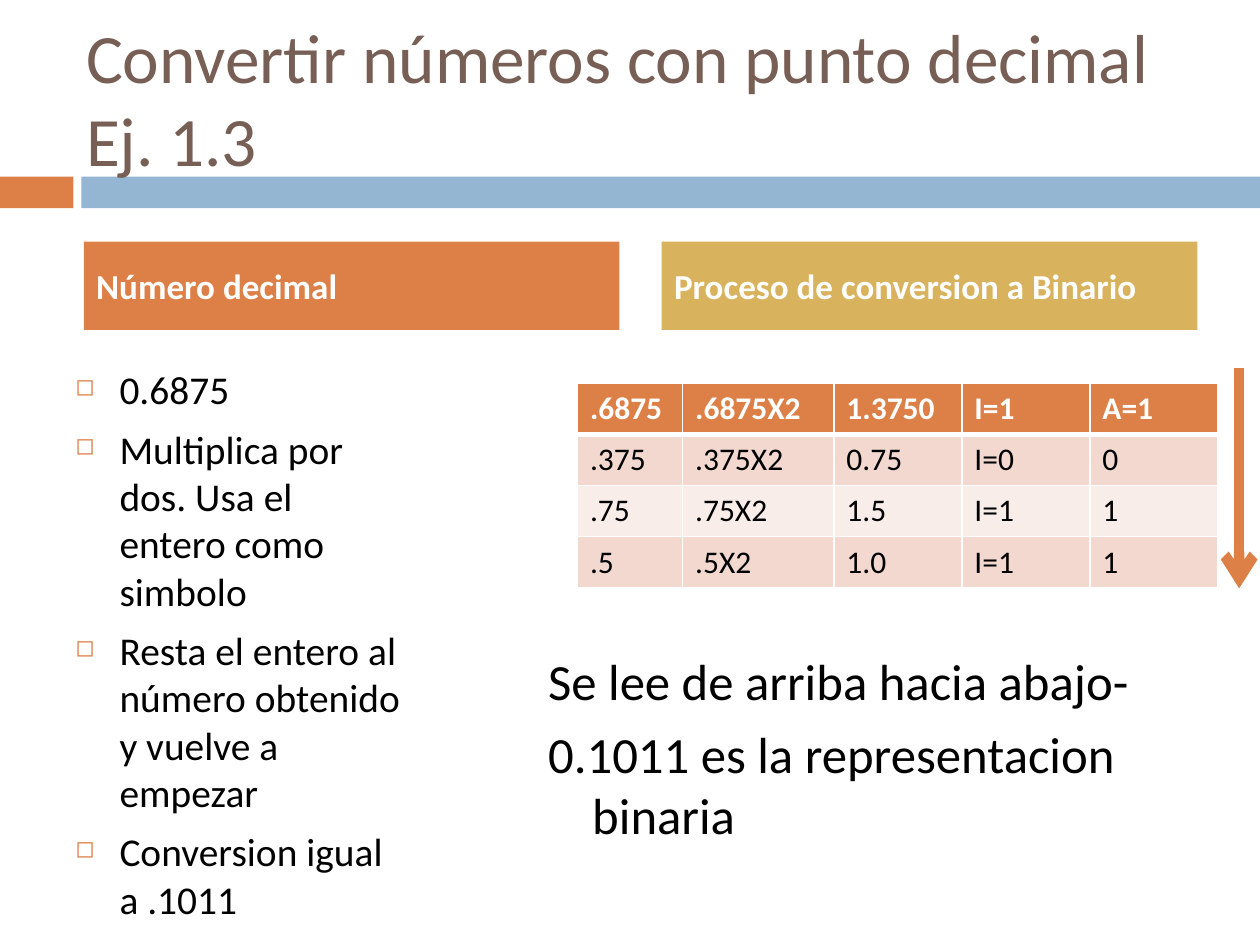
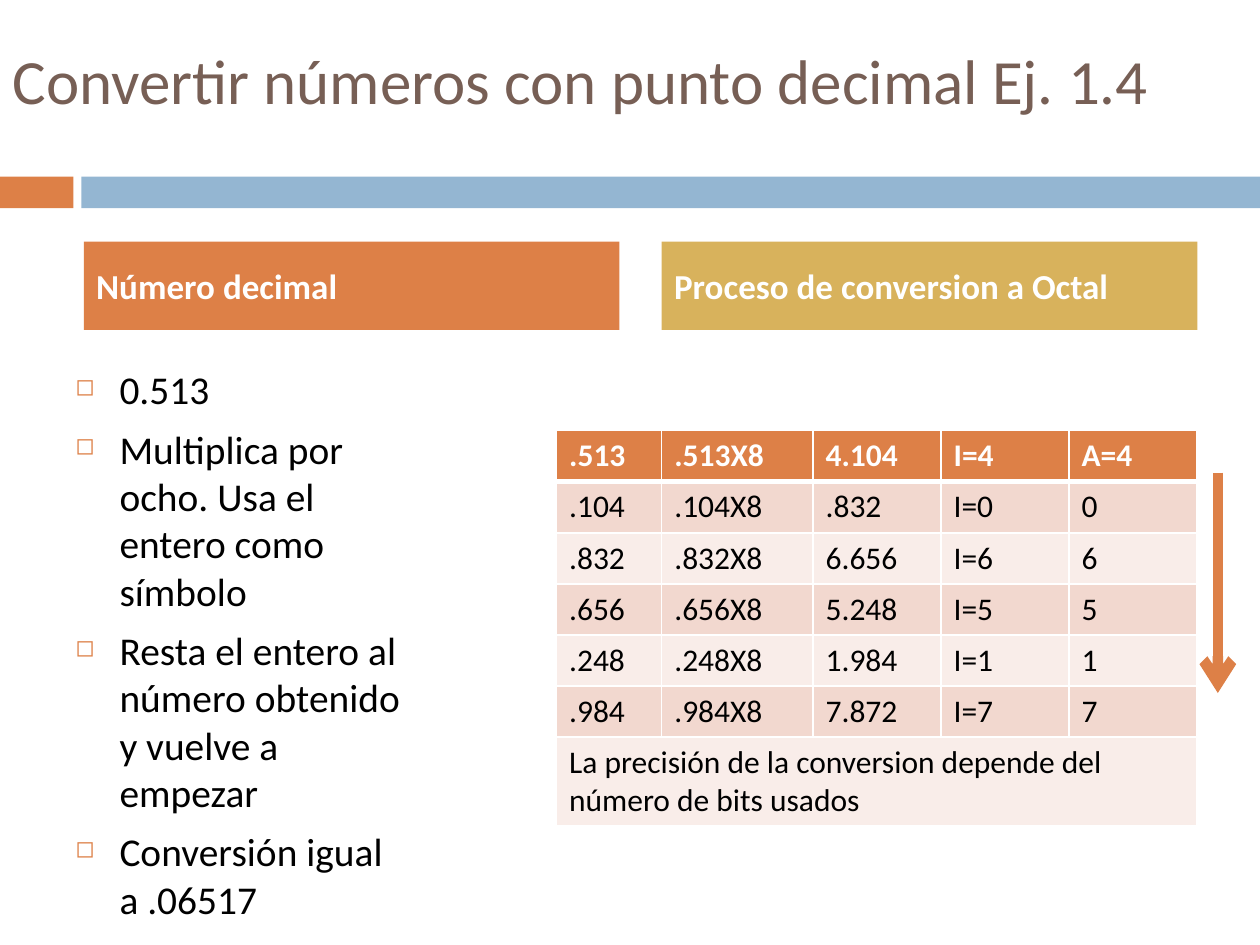
from pptx import Presentation
from pptx import util as u
from pptx.dml import color
from pptx.enum import shapes, text
from pptx.oxml import ns
from lxml import etree

# Shared style
FONT = "Calibri"
ORANGE, BLUE, GOLD, BROWN = "DD8047", "94B6D2", "D8B25C", "775F55"
BLACK, WHITE = "000000", "FFFFFF"
ROW_TINTS = ("F9EDE9", "F2D8CF")
COLUMNS = (2.12, 3.05, 2.58, 2.58, 2.58)
ROW_H = 1.03
HANG = 0.89


def rgb(value):
    return color.RGBColor.from_string(value)


def sub(parent, tag, **attrs):
    """Append a DrawingML child element."""
    return etree.SubElement(parent, ns.qn(f"a:{tag}"), **attrs)


def write(p, content, size=18, colour=BLACK, bold=False, before=0, hang=0, bullet=None):
    p.alignment = text.PP_ALIGN.LEFT
    p.space_before = u.Pt(before)
    pPr = p._p.get_or_add_pPr()
    if hang:
        pPr.set("marL", str(u.Cm(hang)))
        pPr.set("indent", str(-u.Cm(hang)))
    if bullet:
        sub(sub(pPr, "buClr"), "srgbClr", val=ORANGE)
        sub(pPr, "buSzPct", val="60000")
        sub(pPr, "buChar", char=bullet)
    r = p.add_run()
    r.text = content
    r.font.name, r.font.size, r.font.bold = FONT, u.Pt(size), bold
    r.font.color.rgb = rgb(colour)


class Deck:
    def __init__(self):
        self.prs = Presentation()
        self.prs.slide_width, self.prs.slide_height = u.Cm(25.4), u.Cm(19.05)
        self.layout = self.prs.slide_layouts[5]
        self.s = None

    def slide(self, title, box, size):
        first = self.s is None
        self.s = self.prs.slides.add_slide(self.layout)
        if first:
            self.bands()
        sp = self.s.shapes.title
        sp.left, sp.top, sp.width, sp.height = map(u.Cm, box)
        tf = sp.text_frame
        tf.auto_size = text.MSO_AUTO_SIZE.NONE
        tf.vertical_anchor = text.MSO_ANCHOR.MIDDLE
        write(tf.paragraphs[0], title, size=size, colour=BROWN)

    def bands(self):
        """Draw the two bands and hand them to the layout, behind every slide."""
        for i, (left, width, fill) in enumerate([(0, 1.48, ORANGE), (1.64, 23.76, BLUE)]):
            band = self.rect((left, 3.56, width, 0.64), fill).element
            band.nvSpPr.cNvPr.set("id", str(101 + i))
            self.layout.shapes.element.insert(2 + i, band)

    def rect(self, box, fill):
        sp = self.s.shapes.add_shape(shapes.MSO_SHAPE.RECTANGLE, *map(u.Cm, box))
        sp.shadow.inherit = False
        sp.fill.solid()
        sp.fill.fore_color.rgb = rgb(fill)
        sp.line.fill.background()
        return sp

    def heading(self, content, left, fill):
        tf = self.rect((left, 4.87, 10.8, 1.78), fill).text_frame
        tf.word_wrap = True
        tf.vertical_anchor = text.MSO_ANCHOR.MIDDLE
        write(tf.paragraphs[0], content, size=20, colour=WHITE, bold=True, before=7)

    def paragraphs(self, lines, box, **fmt):
        tf = self.s.shapes.add_textbox(*map(u.Cm, box)).text_frame
        tf.word_wrap = True
        for i, line in enumerate(lines):
            p = tf.add_paragraph() if i else tf.paragraphs[0]
            write(p, line, before=7, hang=HANG, **fmt)

    def table(self, rows, left, top, note=None):
        count = len(rows) + bool(note)
        frame = self.s.shapes.add_table(count, len(COLUMNS), u.Cm(left), u.Cm(top),
                                        u.Cm(sum(COLUMNS)), u.Cm(ROW_H * count))
        tbl = frame.table
        tbl.first_row = tbl.horz_banding = False
        for column, width in zip(tbl.columns, COLUMNS):
            column.width = u.Cm(width)
        for row in tbl.rows:
            row.height = u.Cm(ROW_H)
        for i in range(count):
            for j in range(len(COLUMNS)):
                self.cell(tbl.cell(i, j), i)
        for i, values in enumerate(rows):
            for j, value in enumerate(values):
                write(tbl.cell(i, j).text_frame.paragraphs[0], value,
                      colour=BLACK if i else WHITE, bold=i == 0)
        if note:
            tbl.rows[count - 1].height = u.Cm(1.78)
            start = tbl.cell(count - 1, 0)
            start.merge(tbl.cell(count - 1, len(COLUMNS) - 1))
            write(start.text_frame.paragraphs[0], note)

    def cell(self, cell, row):
        """White borders, thicker under the header, and the row's tint."""
        tcPr = cell._tc.get_or_add_tcPr()
        for side in "LRTB":
            thick = (side, row) in (("B", 0), ("T", 1))
            ln = sub(tcPr, f"ln{side}", w=str(u.Pt(3 if thick else 1)))
            sub(sub(ln, "solidFill"), "srgbClr", val=WHITE)
        cell.fill.solid()
        cell.fill.fore_color.rgb = rgb(ROW_TINTS[row % 2] if row else ORANGE)

    def arrow_down(self, x, top, bottom):
        sp = self.s.shapes.add_connector(shapes.MSO_CONNECTOR.STRAIGHT,
                                         u.Cm(x), u.Cm(top), u.Cm(x), u.Cm(bottom))
        sp.line.width = u.Pt(6)
        sp.line.color.rgb = rgb(ORANGE)
        sub(sp.line._get_or_add_ln(), "tailEnd", type="arrow")
        sub(sp.element.spPr, "effectLst")

    def conversion(self, base, steps):
        """Headings and the bulleted steps of one conversion."""
        self.heading("Número decimal", 1.69, ORANGE)
        self.heading(f"Proceso de conversion a {base}", 13.34, GOLD)
        self.paragraphs(steps, (1.27, 7.24, 7.2, 10.97), size=22.5, bullet="◻")


def main():
    deck = Deck()
    subtract = "Resta el entero al número obtenido y vuelve a empezar"

    # Decimal to binary
    deck.slide("Convertir números con punto decimal Ej. 1.3", (1.48, 0.76, 22.65, 2.41), 39.6)
    deck.conversion("Binario", ["0.6875", "Multiplica por dos. Usa el entero como simbolo",
                                subtract, "Conversion igual a .1011"])
    deck.paragraphs(["Se lee de arriba hacia abajo-", "0.1011 es la representacion binaria"],
                    (10.8, 12.98, 13.34, 5), size=29)
    deck.table([
        (".6875", ".6875X2", "1.3750", "I=1", "A=1"),
        (".375", ".375X2", "0.75", "I=0", "0"),
        (".75", ".75X2", "1.5", "I=1", "1"),
        (".5", ".5X2", "1.0", "I=1", "1"),
    ], 11.64, 7.73)
    deck.arrow_down(24.98, 7.41, 11.86)

    # Decimal to octal
    deck.slide("Convertir números con punto decimal Ej. 1.4", (0, 0, 24.98, 3.18), 36)
    deck.conversion("Octal", ["0.513", "Multiplica por ocho. Usa el entero como símbolo",
                              subtract, "Conversión igual a .06517"])
    deck.table([
        (".513", ".513X8", "4.104", "I=4", "A=4"),
        (".104", ".104X8", ".832", "I=0", "0"),
        (".832", ".832X8", "6.656", "I=6", "6"),
        (".656", ".656X8", "5.248", "I=5", "5"),
        (".248", ".248X8", "1.984", "I=1", "1"),
        (".984", ".984X8", "7.872", "I=7", "7"),
    ], 11.22, 8.68, note="La precisión de la conversion depende del número de bits usados")
    deck.arrow_down(24.55, 9.53, 13.97)

    deck.prs.save("out.pptx")


if __name__ == "__main__":
    main()
